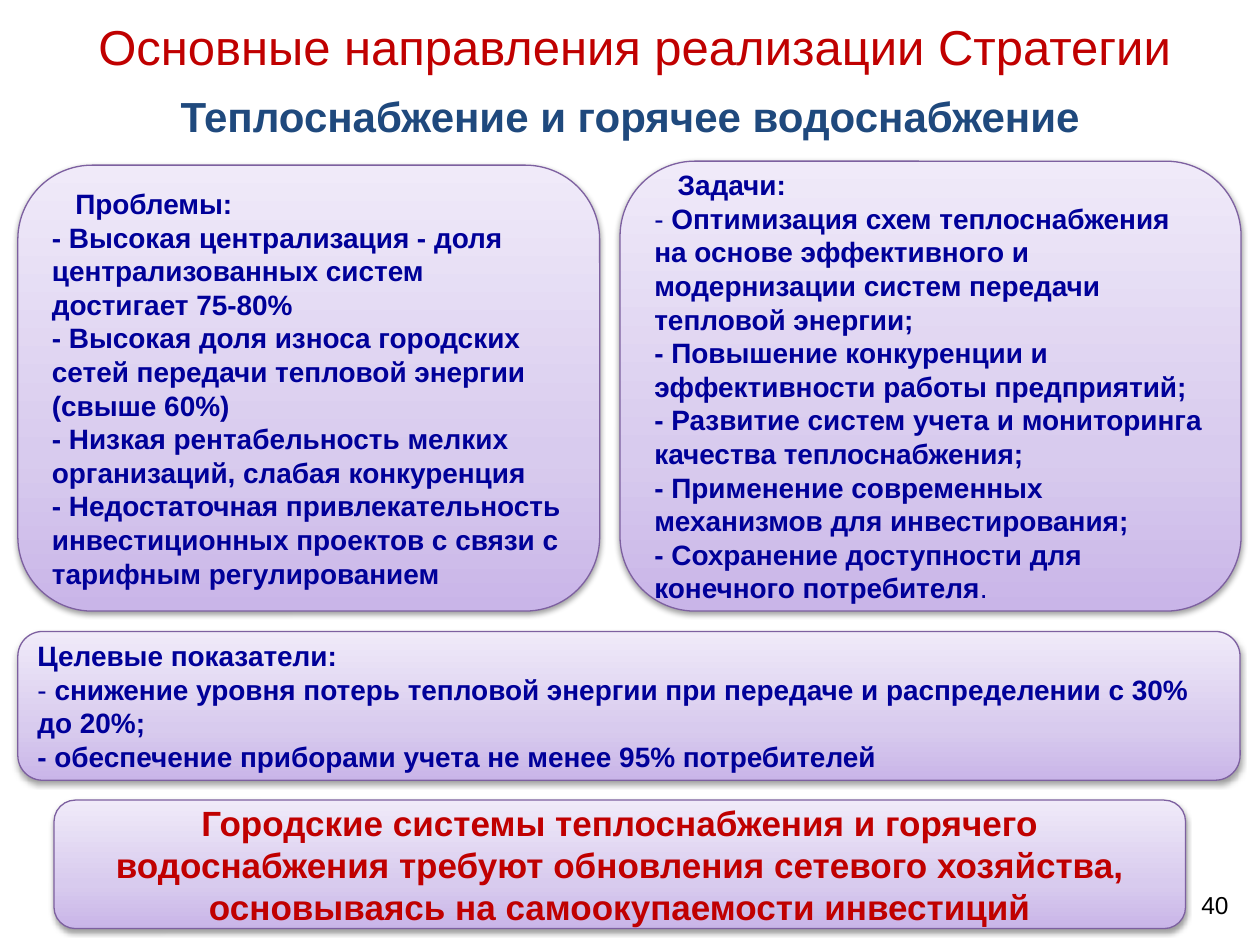
"""Build the slide on heat and hot water supply within the strategy."""
import copy

import lxml.etree
import pptx
import pptx.dml.color
import pptx.enum.dml
import pptx.enum.shapes
import pptx.enum.text
import pptx.oxml.ns
import pptx.util

Cm = pptx.util.Cm
Align = pptx.enum.text.PP_ALIGN

COLORS = {
    "red": "C00000",
    "heading": "1F497D",
    "body": "000099",
    "number": "000000",
    "outline": "7D60A0",
    "shadow": "000000",
    "panel_bottom": "C9B5E8",
    "panel_middle": "D8CBEE",
    "panel_top": "F0EAF9",
}
PANEL_STOPS = [(0, "panel_bottom"), (0.35, "panel_middle"), (1, "panel_top")]
SHADOW = {"blurRad": "40000", "dist": "20000", "dir": "5400000", "rotWithShape": "0"}

PROBLEMS = [
    "Проблемы:",
    "- Высокая централизация - доля централизованных систем достигает 75-80%",
    "- Высокая доля износа городских сетей передачи тепловой энергии (свыше 60%)",
    "- Низкая рентабельность мелких организаций, слабая конкуренция",
    "- Недостаточная привлекательность инвестиционных проектов с связи с тарифным регулированием",
]
TASKS = [
    "Задачи:",
    [("- ", False), ("Оптимизация схем теплоснабжения на основе эффективного и "
                     "модернизации систем передачи тепловой энергии;", True)],
    "- Повышение конкуренции и эффективности работы предприятий;",
    "- Развитие систем учета и мониторинга качества теплоснабжения;",
    "- Применение современных механизмов для инвестирования;",
    [("- Сохранение доступности для конечного потребителя", True), (".", False)],
]
TARGETS = [
    "Целевые показатели:",
    [("- ", False), ("снижение уровня потерь тепловой энергии при передаче и "
                     "распределении с 30% до 20%;", True)],
    "- обеспечение приборами учета не менее 95% потребителей",
]
CONCLUSION = [
    "Городские системы теплоснабжения и горячего водоснабжения требуют обновления "
    "сетевого хозяйства, основываясь на самоокупаемости инвестиций"
]


def rgb(name):
    """Return the named colour."""
    return pptx.dml.color.RGBColor.from_string(COLORS[name])


class SlideBuilder:
    """Hold the style and the current slide."""

    font_name = "Arial"
    frame_format = {
        "word_wrap": True,
        "auto_size": pptx.enum.text.MSO_AUTO_SIZE.NONE,
        "vertical_anchor": pptx.enum.text.MSO_ANCHOR.MIDDLE,
    }

    def __init__(self, presentation):
        """Add a slide with a title placeholder."""
        self.slide = presentation.slides.add_slide(presentation.slide_layouts[5])

    def fill_text(self, shape, lines, size, color, bold=False, align=Align.LEFT, indent=0):
        """Fill a shape with paragraphs, the first one indented."""
        frame = shape.text_frame
        for name, value in self.frame_format.items():
            setattr(frame, name, value)
        for index, line in enumerate(lines):
            paragraph = frame.paragraphs[0] if index == 0 else frame.add_paragraph()
            paragraph.alignment = align
            if index == 0 and indent:
                paragraph._p.get_or_add_pPr().set("indent", str(Cm(indent)))
            for text, run_bold in [(line, bold)] if isinstance(line, str) else line:
                run = paragraph.add_run()
                run.text = text
                font_format = {"name": self.font_name, "size": pptx.util.Pt(size), "bold": run_bold}
                for name, value in font_format.items():
                    setattr(run.font, name, value)
                run.font.color.rgb = rgb(color)

    def title(self, box, text, **style):
        """Place and fill the title placeholder."""
        shape = self.slide.shapes.title
        for name, value in zip(("left", "top", "width", "height"), box):
            setattr(shape, name, Cm(value))
        self.fill_text(shape, [text], **style)

    def label(self, box, text, **style):
        """Add a text box."""
        shape = self.slide.shapes.add_textbox(*map(Cm, box))
        self.fill_text(shape, [text], **style)

    def panel(self, box, lines, **style):
        """Add a rounded gradient panel with a soft shadow."""
        kind = pptx.enum.shapes.MSO_SHAPE.ROUNDED_RECTANGLE
        shape = self.slide.shapes.add_shape(kind, *map(Cm, box))
        shape.line.color.rgb = rgb("outline")
        shape.line.width = pptx.util.Pt(0.75)
        self.shade(shape)
        self.drop_shadow(shape)
        self.fill_text(shape, lines, bold=True, **style)

    def shade(self, shape):
        """Apply the three-stop vertical gradient."""
        shape.fill.gradient()
        shape.fill.gradient_angle = 90
        stop_list = shape._element.spPr.find(".//" + pptx.oxml.ns.qn("a:gsLst"))
        stop_list.append(copy.deepcopy(stop_list[0]))
        for stop, (position, color) in zip(shape.fill.gradient_stops, PANEL_STOPS):
            stop.position = position
            stop.color.rgb = rgb(color)

    def drop_shadow(self, shape):
        """Replace the theme shadow by an explicit one."""
        qn = pptx.oxml.ns.qn
        shape.shadow.inherit = False
        effects = shape._element.spPr.find(qn("a:effectLst"))
        shadow = lxml.etree.SubElement(effects, qn("a:outerShdw"), SHADOW)
        color = lxml.etree.SubElement(shadow, qn("a:srgbClr"), {"val": COLORS["shadow"]})
        lxml.etree.SubElement(color, qn("a:alpha"), {"val": "38000"})


def main():
    """Build and save the presentation."""
    presentation = pptx.Presentation()
    presentation.slide_width = Cm(25.4)
    presentation.slide_height = Cm(19.05)
    builder = SlideBuilder(presentation)
    body = {"size": 16, "color": "body"}

    builder.label((19.1, 17.73, 5.92, 1.02), "40", size=14, color="number", align=Align.RIGHT)
    builder.panel((0.36, 12.73, 24.64, 3), TARGETS, **body)
    builder.panel((0.36, 3.33, 11.73, 8.99), PROBLEMS, indent=0.47, **body)
    builder.panel((12.5, 3.25, 12.52, 9.07), TASKS, indent=0.47, **body)
    builder.panel((1.09, 16.13, 22.81, 2.59), CONCLUSION, size=20, color="red", align=Align.CENTER)
    builder.title((0.1, 1.6, 25.2, 1.45), "Теплоснабжение и горячее водоснабжение",
                  size=24, color="heading", bold=True, align=Align.CENTER)
    builder.label((0.56, 0, 24.46, 1.85), "Основные направления реализации Стратегии",
                  size=28, color="red", align=Align.CENTER)
    presentation.save("out.pptx")


if __name__ == "__main__":
    main()
